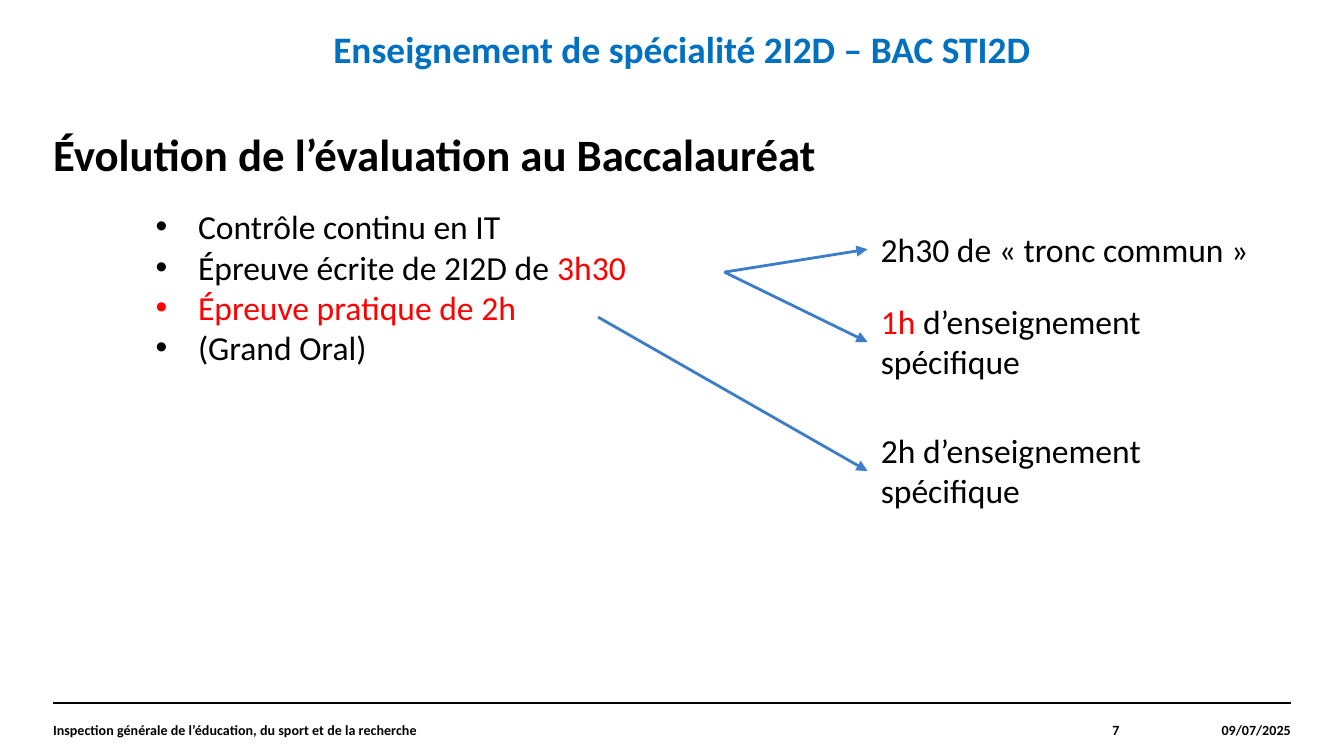
from lxml import etree
from pptx import Presentation
from pptx.dml.color import RGBColor
from pptx.enum.shapes import MSO_CONNECTOR
from pptx.enum.text import MSO_ANCHOR as ANCHOR, MSO_AUTO_SIZE as AUTO, PP_ALIGN as ALIGN
from pptx.oxml.ns import qn
from pptx.util import Pt

PX = 4572  # EMU per px, 200 px to the inch
BLACK, RED, BLUE, ARROW = "000000", "FF0000", "0070C0", "3D7CC9"
LEFT = 1  # connection site on a rectangle


def px(*values):
    return [v * PX for v in values]


def rgb(value):
    return RGBColor.from_string(value)


def add_bullet(p, indent):
    pPr = p._p.get_or_add_pPr()
    pPr.set("marL", str(indent * PX))
    pPr.set("indent", str(-indent * PX))
    etree.SubElement(pPr, qn("a:buFont")).set("typeface", "Arial")
    etree.SubElement(pPr, qn("a:buChar")).set("char", "•")


def write(sp, paragraphs, size=18, bold=False, align=ALIGN.LEFT, anchor=ANCHOR.TOP,
          inset=True, bullet=0, spacing=None):
    """Fill sp with paragraphs, each a list of (text, colour) runs."""
    tf = sp.text_frame
    tf.word_wrap = True
    tf.auto_size = AUTO.SHAPE_TO_FIT_TEXT if inset else AUTO.NONE
    tf.vertical_anchor = anchor
    if not inset:
        tf.margin_left = tf.margin_top = tf.margin_right = tf.margin_bottom = 0
    for i, runs in enumerate(paragraphs):
        p = tf.add_paragraph() if i else tf.paragraphs[0]
        p.alignment = align
        if spacing:
            p.line_spacing = spacing
        if bullet:
            add_bullet(p, bullet)
        for text, color in runs:
            r = p.add_run()
            r.text = text
            r.font.name, r.font.size, r.font.bold = "Calibri", Pt(size), bold
            r.font.color.rgb = rgb(color)


def add_text(slide, box, paragraphs, **fmt):
    sp = slide.shapes.add_textbox(*px(*box))
    write(sp, paragraphs, **fmt)
    return sp


def add_line(slide, start, end, color, width, target=None):
    """Draw a line; with a target, an arrow joined to its left side."""
    line = slide.shapes.add_connector(MSO_CONNECTOR.STRAIGHT, *px(*start, *end))
    line.line.color.rgb = rgb(color)
    line.line.width = Pt(width)
    if target is not None:
        line.end_connect(target, LEFT)
        etree.SubElement(line.line._get_or_add_ln(), qn("a:tailEnd")).set("type", "triangle")
    etree.SubElement(line._element.spPr, qn("a:effectLst"))


def add_heading(slide, box):
    x, y, w, h = box
    add_text(slide, (x + 417, y, 1244, h), [[("Enseignement de spécialité 2I2D – BAC STI2D", BLUE)]],
             size=20, bold=True, inset=False)
    title = slide.shapes.title
    title.left, title.top, title.width, title.height = px(x, y + 158, w, h)
    write(title, [[("Évolution de l’évaluation au Baccalauréat", BLACK)]],
          size=24, bold=True, inset=False, spacing=0.9)


def add_exams(slide, box):
    x, y, w, h = box
    add_text(slide, box, [
        [("Contrôle continu en IT", BLACK)],
        [("Épreuve écrite de 2I2D de ", BLACK), ("3h30", RED)],
        [("Épreuve pratique de 2h", RED)],
        [("(Grand Oral)", BLACK)],
    ], bullet=63)
    written, practical = (x + 866, y + 108), (x + 678, y + 175)
    parts = [
        (written, 34, 700, 80, [("2h30 de «\u00a0tronc commun\u00a0»", BLACK)]),
        (written, 141, 582, 142, [("1h", RED), (" d’enseignement spécifique", BLACK)]),
        (practical, 333, 582, 142, [("2h d’enseignement spécifique", BLACK)]),
    ]
    for start, dy, width, height, runs in parts:
        left, top = x + 1079, y + dy
        part = add_text(slide, (left, top, width, height), [runs])
        add_line(slide, start, (left, top + height // 2), ARROW, 1.5, part)


def add_footer(slide, box):
    x, y, w, h = box
    add_line(slide, (x, y), (x + w, y), BLACK, 0.8)
    cells = [
        ("Inspection générale de l’éducation, du sport et de la recherche", 1291, ALIGN.LEFT),
        ("7", 296, ALIGN.RIGHT),
        ("09/07/2025", 255, ALIGN.RIGHT),
    ]
    for text, width, align in cells:
        add_text(slide, (x, y, width, h), [[(text, BLACK)]], size=7.5, bold=True,
                 align=align, anchor=ANCHOR.MIDDLE, inset=False)
        x += width


def main():
    prs = Presentation()
    prs.slide_width, prs.slide_height = px(2000, 1125)
    slide = prs.slides.add_slide(prs.slide_layouts[5])
    add_heading(slide, (79, 39, 1842, 79))
    add_exams(slide, (212, 297, 1670, 262))
    add_footer(slide, (79, 1046, 1842, 79))
    prs.save("out.pptx")


if __name__ == "__main__":
    main()
